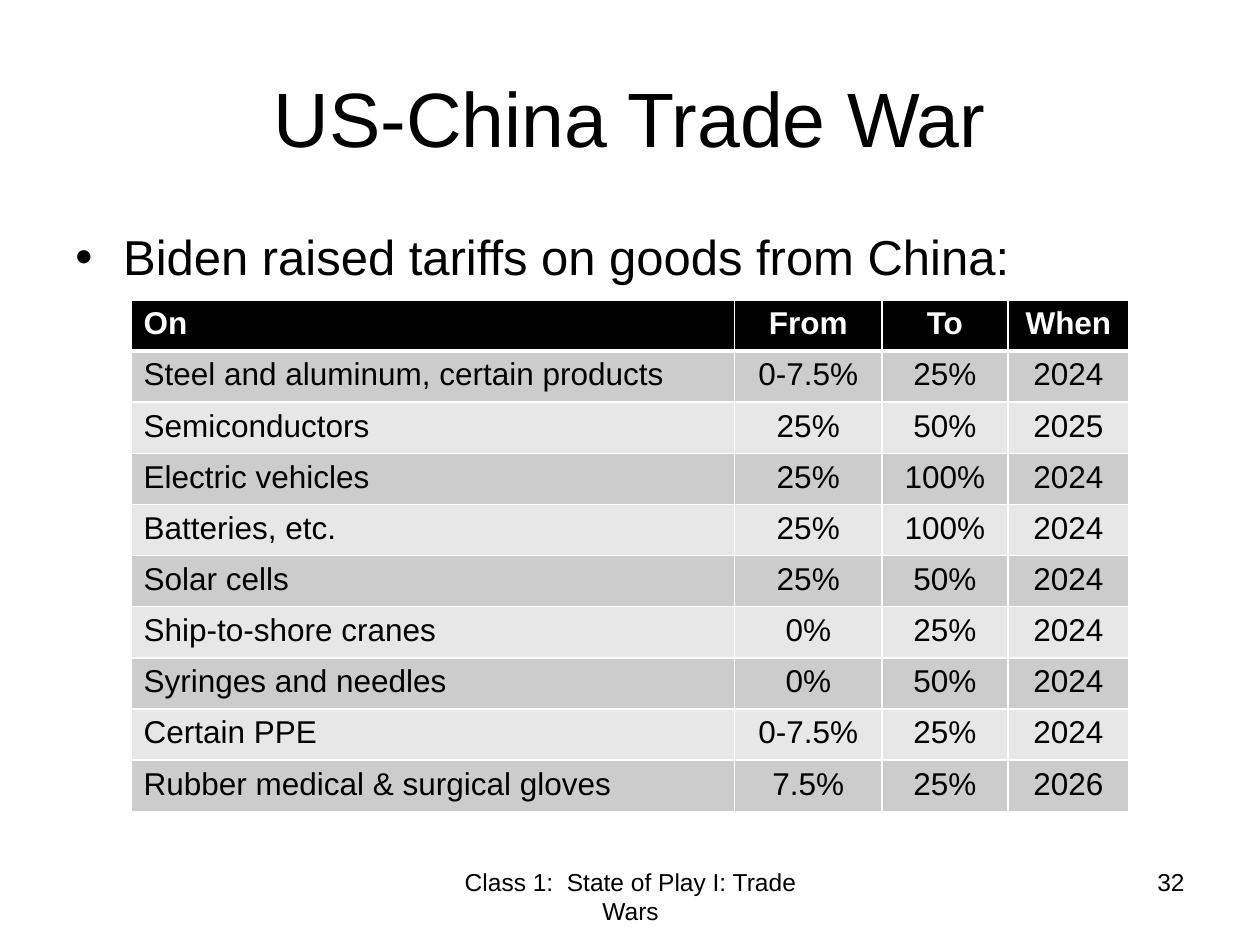
from lxml import etree
from pptx import Presentation
from pptx.dml.color import RGBColor
from pptx.enum.text import MSO_ANCHOR, PP_ALIGN
from pptx.oxml.ns import qn
from pptx.util import Inches, Pt

LEFT, CENTER, RIGHT = PP_ALIGN.LEFT, PP_ALIGN.CENTER, PP_ALIGN.RIGHT
TOP, MIDDLE = MSO_ANCHOR.TOP, MSO_ANCHOR.MIDDLE
COLORS = {
    "text": "000000",
    "header": "000000",
    "header_text": "FFFFFF",
    "odd_row": "CCCCCC",
    "even_row": "E7E7E7",
    "border": "FFFFFF",
}


def write(paragraph, text, size, color="text", bold=False, align=LEFT):
    paragraph.alignment = align
    run = paragraph.add_run()
    run.text = text
    font_format = {"name": "Arial", "size": Pt(size), "bold": bold}
    for name, value in font_format.items():
        setattr(run.font, name, value)
    run.font.color.rgb = RGBColor.from_string(COLORS[color])


def add_border(cell, side, width):
    line = etree.SubElement(cell._tc.get_or_add_tcPr(), qn(f"a:ln{side}"), w=str(Pt(width)))
    fill = etree.SubElement(line, qn("a:solidFill"))
    etree.SubElement(fill, qn("a:srgbClr"), val=COLORS["border"])


presentation = Presentation()
presentation.slide_width = Inches(10)
presentation.slide_height = Inches(7.5)
slide = presentation.slides.add_slide(presentation.slide_layouts[6])

# Text boxes: text, left, top, width, height, size, alignment, anchor
texts = {
    "body": ("Biden raised tariffs on goods from China:", 0.5, 1.75, 9, 4.95, 28, LEFT, TOP),
    "title": ("US-China Trade War", 0.5, 0.3, 9, 1.25, 44, CENTER, MIDDLE),
    "footer": ("Class 1:  State of Play I: Trade Wars", 3.42, 6.83, 3.17, 0.52, 14, CENTER, TOP),
    "slide number": ("32", 7.17, 6.83, 2.33, 0.52, 14, RIGHT, TOP),
}
for role, (text, left, top, width, height, size, align, anchor) in texts.items():
    shape = slide.shapes.add_textbox(Inches(left), Inches(top), Inches(width), Inches(height))
    shape.text_frame.word_wrap = True
    shape.text_frame.vertical_anchor = anchor
    paragraph = shape.text_frame.paragraphs[0]
    write(paragraph, text, size, align=align)
    if role == "body":
        properties = paragraph._p.get_or_add_pPr()
        properties.set("marL", str(Inches(0.38)))
        properties.set("indent", str(Inches(-0.38)))
        spacing = etree.SubElement(properties, qn("a:spcBef"))
        etree.SubElement(spacing, qn("a:spcPct"), val="20000")
        etree.SubElement(properties, qn("a:buFont"), typeface="Arial")
        etree.SubElement(properties, qn("a:buChar"), char="•")

# Tariff table
tariffs = [
    ("On", "From", "To", "When"),
    ("Steel and aluminum, certain products", "0-7.5%", "25%", "2024"),
    ("Semiconductors", "25%", "50%", "2025"),
    ("Electric vehicles", "25%", "100%", "2024"),
    ("Batteries, etc.", "25%", "100%", "2024"),
    ("Solar cells", "25%", "50%", "2024"),
    ("Ship-to-shore cranes", "0%", "25%", "2024"),
    ("Syringes and needles", "0%", "50%", "2024"),
    ("Certain PPE", "0-7.5%", "25%", "2024"),
    ("Rubber medical & surgical gloves", "7.5%", "25%", "2026"),
]
column_widths = [4.79, 1.17, 1, 0.96]
table = slide.shapes.add_table(
    len(tariffs), len(column_widths),
    Inches(1.04), Inches(2.38), Inches(sum(column_widths)), Inches(4.06),
).table
for column, width in zip(table.columns, column_widths):
    column.width = Inches(width)

for row_index, row in enumerate(tariffs):
    is_header = row_index == 0
    row_fill = "header" if is_header else "odd_row" if row_index % 2 else "even_row"
    for column_index, text in enumerate(row):
        cell = table.cell(row_index, column_index)
        borders = {
            "L": 1,
            "R": 1,
            "T": 3 if row_index == 1 else 1,
            "B": 3 if is_header else 1,
        }
        for side, width in borders.items():
            add_border(cell, side, width)
        cell.fill.solid()
        cell.fill.fore_color.rgb = RGBColor.from_string(COLORS[row_fill])
        write(
            cell.text_frame.paragraphs[0], text, 18,
            color="header_text" if is_header else "text",
            bold=is_header,
            align=CENTER if column_index else LEFT,
        )

presentation.save("out.pptx")
